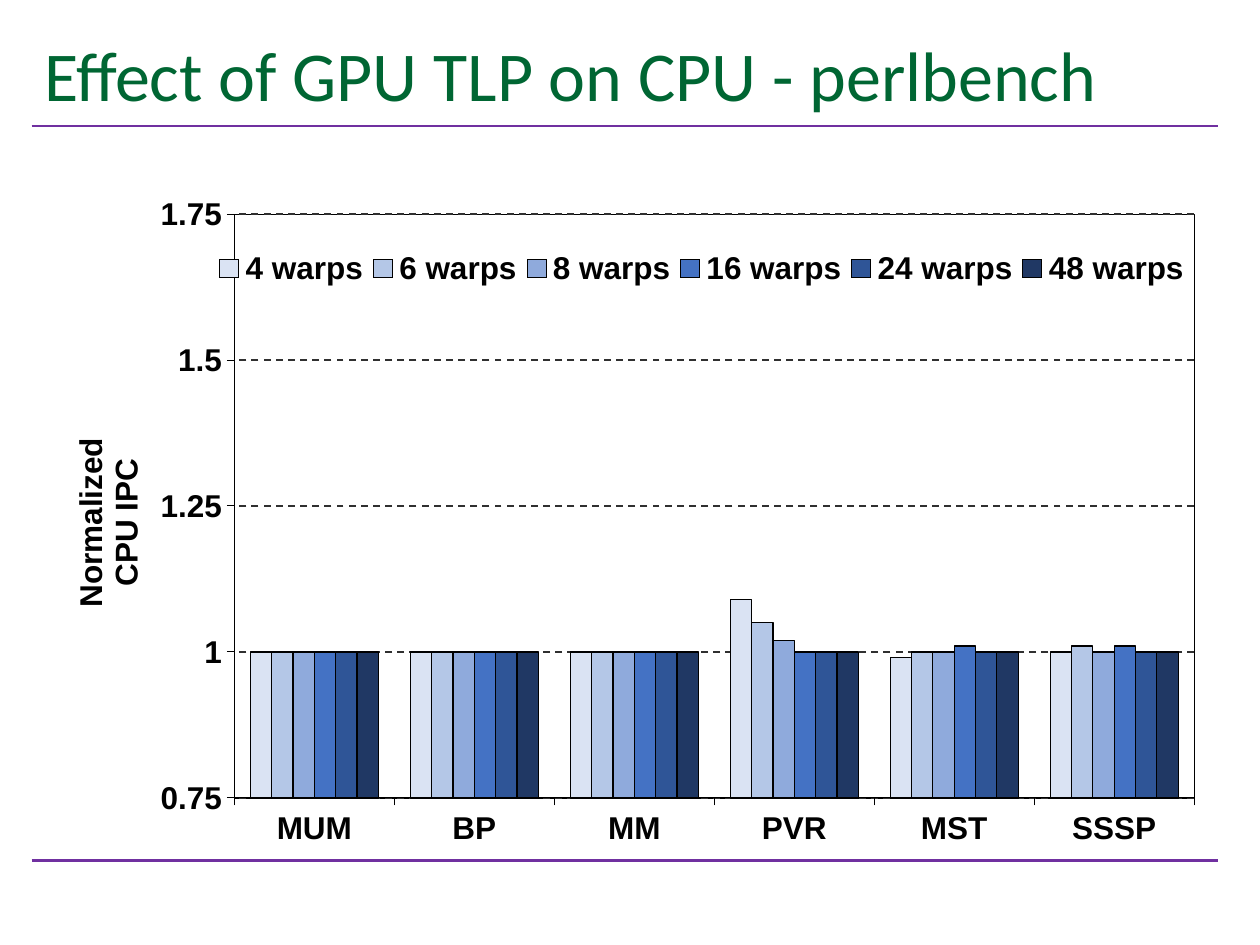
from lxml.etree import SubElement
from pptx import Presentation
from pptx.chart.data import CategoryChartData
from pptx.dml.color import RGBColor
from pptx.enum.chart import XL_CHART_TYPE as ChartType, XL_LEGEND_POSITION as LegendPosition
from pptx.enum.chart import XL_TICK_MARK as TickMark
from pptx.enum.dml import MSO_LINE as LineStyle
from pptx.enum.shapes import MSO_CONNECTOR as Connector
from pptx.enum.text import MSO_ANCHOR as Anchor, PP_ALIGN as Align
from pptx.oxml import parse_xml
from pptx.oxml.ns import nsdecls, qn
from pptx.util import Pt

BENCHMARKS = ["MUM", "BP", "MM", "PVR", "MST", "SSSP"]
WARPS = [
    ("4 warps", "DAE3F3", [1, 1, 1, 1.09, 0.99, 1]),
    ("6 warps", "B4C7E7", [1, 1, 1, 1.05, 1, 1.01]),
    ("8 warps", "8FAADC", [1, 1, 1, 1.02, 1, 1]),
    ("16 warps", "4472C4", [1, 1, 1, 1, 1.01, 1.01]),
    ("24 warps", "2F5597", [1] * 6),
    ("48 warps", "203864", [1] * 6),
]


def color(value):
    """Turn a hex string into a colour."""
    return RGBColor.from_string(value)


def format_font(font, name="Arial", size=18, bold=True, fill="000000"):
    """Set the typeface, size, weight and colour of a font."""
    font.name, font.size, font.bold = name, Pt(size), bold
    font.color.rgb = color(fill)


def format_line(line, fill="000000", width=0.5):
    """Set the colour and width of a line."""
    line.color.rgb = color(fill)
    line.width = Pt(width)


def write_text(frame, text, align=Align.LEFT, **font_format):
    """Write one paragraph per line of text in the given format."""
    frame.text = text
    for paragraph in frame.paragraphs:
        paragraph.alignment = align
        format_font(paragraph.runs[0].font, **font_format)


def add_rule(slide, left, top, width):
    """Draw a purple horizontal rule."""
    rule = slide.shapes.add_connector(Connector.STRAIGHT, Pt(left), Pt(top), Pt(left + width), Pt(top))
    format_line(rule.line, "7030A0", 1.5)
    SubElement(rule._element.spPr, qn("a:effectLst"))


def place_title(slide, text, left, top, width, height):
    """Move the title placeholder into its box and fill it."""
    title = slide.shapes.title
    title.left, title.top, title.width, title.height = map(Pt, (left, top, width, height))
    title.text_frame.vertical_anchor = Anchor.MIDDLE
    write_text(title.text_frame, text, name="Calibri", size=40, bold=False, fill="006633")


def set_layout(element, index, inner=False, **fractions):
    """Place a chart part by fractions of the chart box."""
    for old in element.findall(qn("c:layout")):
        element.remove(old)
    layout = parse_xml(f"<c:layout {nsdecls('c')}><c:manualLayout/></c:layout>")
    settings = {"layoutTarget": "inner"} if inner else {}
    settings.update({"xMode": "edge", "yMode": "edge"}, **fractions)
    for tag, value in settings.items():
        SubElement(layout[0], qn(f"c:{tag}")).set("val", str(value))
    element.insert(index, layout)


def format_axes(chart):
    """Format both axes, the dashed grid and the value axis title."""
    for axis in (chart.category_axis, chart.value_axis):
        axis.major_tick_mark = TickMark.OUTSIDE
        axis.minor_tick_mark = TickMark.NONE
        format_font(axis.tick_labels.font)
        format_line(axis.format.line)
    axis = chart.value_axis
    axis.minimum_scale, axis.maximum_scale, axis.major_unit = 0.75, 1.75, 0.25
    axis.tick_labels.number_format = "General"
    axis.tick_labels.number_format_is_linked = False
    grid = axis.major_gridlines.format.line
    format_line(grid, "303030", 1)
    grid.dash_style = LineStyle.DASH
    title = axis.axis_title
    write_text(title.text_frame, "Normalized\nCPU IPC", align=Align.CENTER)
    body = title.text_frame._txBody.bodyPr
    body.set("rot", "-5400000")
    body.set("vert", "horz")
    set_layout(title._element, 1, x=0.03, y=0.42)


def add_ipc_chart(slide, left, top, width, height):
    """Add the clustered columns of normalized IPC per warp count."""
    data = CategoryChartData()
    data.categories = BENCHMARKS
    for name, _, values in WARPS:
        data.add_series(name, values)
    box = map(Pt, (left, top, width, height))
    chart = slide.shapes.add_chart(ChartType.COLUMN_CLUSTERED, *box, data).chart
    chart.has_title = False
    format_font(chart.font)
    plot = chart.plots[0]
    plot.gap_width, plot.overlap, plot.vary_by_categories = 150, 0, False
    for series, (_, fill, _) in zip(plot.series, WARPS):
        series.format.fill.solid()
        series.format.fill.fore_color.rgb = color(fill)
        format_line(series.format.line, width=0.75)
    format_axes(chart)
    chart.has_legend = True
    legend = chart.legend
    legend.position = LegendPosition.TOP
    legend.include_in_layout = False
    format_font(legend.font)
    set_layout(legend._element, 1, x=0.15, y=0.17, w=0.83, h=0.05)
    area = chart._chartSpace.chart.plotArea
    set_layout(area, 0, inner=True, x=0.171, y=0.121, w=0.809, h=0.794)
    area.append(parse_xml(
        f'<c:spPr {nsdecls("c", "a")}><a:noFill/><a:ln w="{Pt(0.5)}"><a:solidFill>'
        '<a:srgbClr val="000000"/></a:solidFill></a:ln></c:spPr>'))


def build_slide(presentation):
    """Place the title, rules and chart on a title-only slide."""
    slide = presentation.slides.add_slide(presentation.slide_layouts[5])
    left, width, top, bottom = 18, 678, 72, 491.76
    for height in (bottom, top):
        add_rule(slide, left, height, width)
    place_title(slide, "Effect of GPU TLP on CPU - perlbench", left, 12, width, 60)
    add_ipc_chart(slide, left, top - 0.5, width, bottom - top + 0.5)


def main():
    """Build and save the presentation."""
    presentation = Presentation()
    presentation.slide_width, presentation.slide_height = Pt(720), Pt(540)
    build_slide(presentation)
    presentation.save("out.pptx")


if __name__ == "__main__":
    main()
